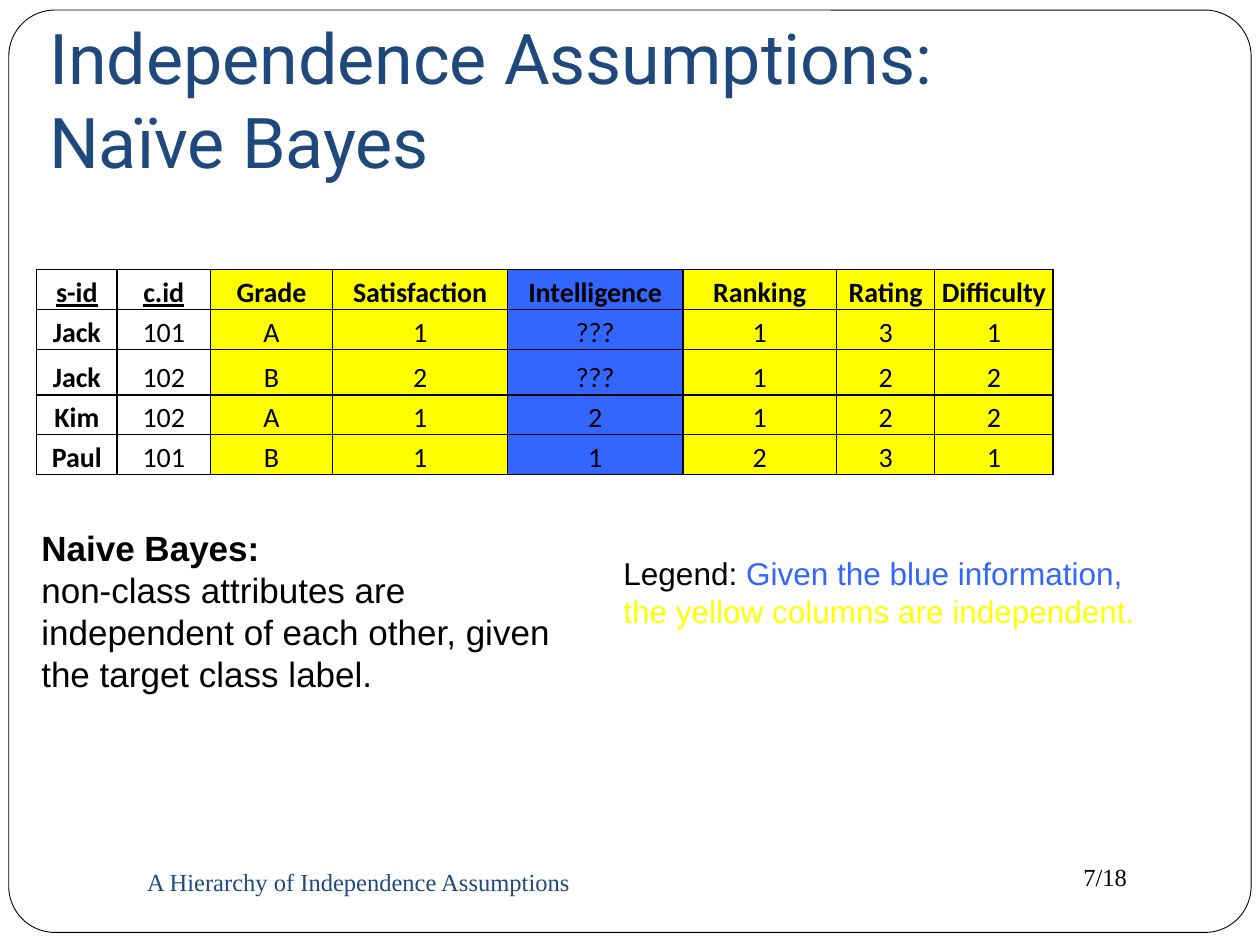
from lxml.etree import SubElement
from pptx import Presentation
from pptx.dml.color import RGBColor as RGB
from pptx.enum.shapes import MSO_SHAPE as Shape
from pptx.enum.text import MSO_ANCHOR as Anchor, PP_ALIGN as Align
from pptx.oxml.ns import qn
from pptx.util import Inches, Pt

HUES = {"black": "000000", "white": "FFFFFF", "navy": "1F497D",
        "blue": "3366FF", "yellow": "FFFF00"}

TITLE = "Independence Assumptions: \nNaïve Bayes"
FOOT = "A Hierarchy of Independence Assumptions"
PAGE = "7/18"
NOTE = [[("Naive Bayes:", {"bold": True})],
        ["non-class attributes are independent of each other, "
         "given the target class label."]]
LEGEND = [["Legend: ", ("Given the blue information,", {"hue": "blue"})],
          [("the yellow columns are independent.", {"hue": "yellow"})]]

COLS = [("s-id", 0.64, None), ("c.id", 0.74, None), ("Grade", 0.97, "yellow"),
        ("Satisfaction", 1.39, "yellow"), ("Intelligence", 1.39, "blue"),
        ("Ranking", 1.22, "yellow"), ("Rating", 0.78, "yellow"),
        ("Difficulty", 0.94, "yellow")]
ROWS = [("Jack", "101", "A", "1", "???", "1", "3", "1"),
        ("Jack", "102", "B", "2", "???", "1", "2", "2"),
        ("Kim", "102", "A", "1", "2", "1", "2", "2"),
        ("Paul", "101", "B", "1", "1", "2", "3", "1")]
TALL = [0.27, 0.27, 0.36, 0.29, 0.29]


def color(name):
    return RGB.from_string(HUES[name])


def write(frame, paras, size=18, face="Arial", hue="black", bold=False,
          line=False, align=None, anchor=None, space=None, after=None):
    frame.word_wrap = True
    if anchor is not None:
        frame.vertical_anchor = anchor
    for i, parts in enumerate(paras):
        para = frame.add_paragraph() if i else frame.paragraphs[0]
        para.alignment = align
        para.line_spacing = space
        para.space_after = after
        for part in parts:
            words, own = part if isinstance(part, tuple) else (part, {})
            for j, piece in enumerate(words.split("\n")):
                if j:
                    para.add_line_break()
                run = para.add_run()
                run.text = piece
                font = run.font
                font.name, font.size = face, Pt(size)
                font.bold, font.underline = own.get("bold", bold), line
                font.color.rgb = color(own.get("hue", hue))


def place(shape, left, top, width, height):
    shape.left, shape.top = Inches(left), Inches(top)
    shape.width, shape.height = Inches(width), Inches(height)


def label(slide, spot, paras, **style):
    box = slide.shapes.add_textbox(*map(Inches, spot))
    write(box.text_frame, paras, **style)


def border(cell):
    props = cell._tc.get_or_add_tcPr()
    for i, side in enumerate(("lnL", "lnR", "lnT", "lnB")):
        edge = SubElement(props, qn("a:" + side), w=str(Pt(1)))
        fill = SubElement(edge, qn("a:solidFill"))
        SubElement(fill, qn("a:srgbClr"), val=HUES["black"])
        props.remove(edge)
        props.insert(i, edge)


def grid(slide):
    wide = [col[1] for col in COLS]
    data = [[col[0] for col in COLS]] + ROWS
    table = slide.shapes.add_table(
        len(data), len(COLS), Inches(0.29), Inches(2.14),
        Inches(sum(wide)), Inches(sum(TALL))).table
    for col, width in zip(table.columns, wide):
        col.width = Inches(width)
    for r, (row, height) in enumerate(zip(data, TALL)):
        table.rows[r].height = Inches(height)
        for c, words in enumerate(row):
            cell = table.cell(r, c)
            cell.margin_left = cell.margin_right = cell.margin_top = Inches(0.01)
            cell.margin_bottom = 0
            cell.vertical_anchor = Anchor.BOTTOM
            write(cell.text_frame, [[words]], size=16, face="Calibri",
                  bold=r == 0 or c == 0, line=r == 0 and c < 2,
                  align=Align.CENTER, space=1.15, after=Pt(10))
            hue = COLS[c][2]
            if hue:
                cell.fill.solid()
                cell.fill.fore_color.rgb = color(hue)
            else:
                cell.fill.background()
            border(cell)


def main():
    deck = Presentation()
    deck.slide_width, deck.slide_height = Inches(10), Inches(7.5)
    slide = deck.slides.add_slide(deck.slide_layouts[5])

    frame = slide.shapes.add_shape(
        Shape.ROUNDED_RECTANGLE, *map(Inches, (0.07, 0.08, 9.86, 7.32)))
    frame.adjustments[0] = 0.05
    frame.shadow.inherit = False
    frame.fill.solid()
    frame.fill.fore_color.rgb = color("white")
    frame.line.color.rgb = color("black")
    frame.line.width = Pt(0.5)

    label(slide, (8.5, 6.79, 1, 0.34), [[PAGE]], size=14, face="Times New Roman")
    label(slide, (0.23, 4.13, 4.63, 1.45), NOTE, size=20)
    grid(slide)
    label(slide, (4.85, 4.35, 4.46, 0.71), LEGEND)

    title = slide.shapes.title
    place(title, 0.29, 0.3, 9.47, 1.25)
    body = title.text_frame
    body.margin_left = body.margin_right = body.margin_bottom = Inches(0.1)
    body.margin_top = Inches(0.05)
    write(body, [[TITLE]], size=40, face="Roboto", hue="navy",
          align=Align.LEFT, anchor=Anchor.BOTTOM)
    slide.shapes.element.append(title.element)

    label(slide, (1.07, 6.75, 4.33, 0.5), [[FOOT]], size=14,
          face="Times New Roman", hue="navy", anchor=Anchor.MIDDLE)
    deck.save("out.pptx")


if __name__ == "__main__":
    main()
